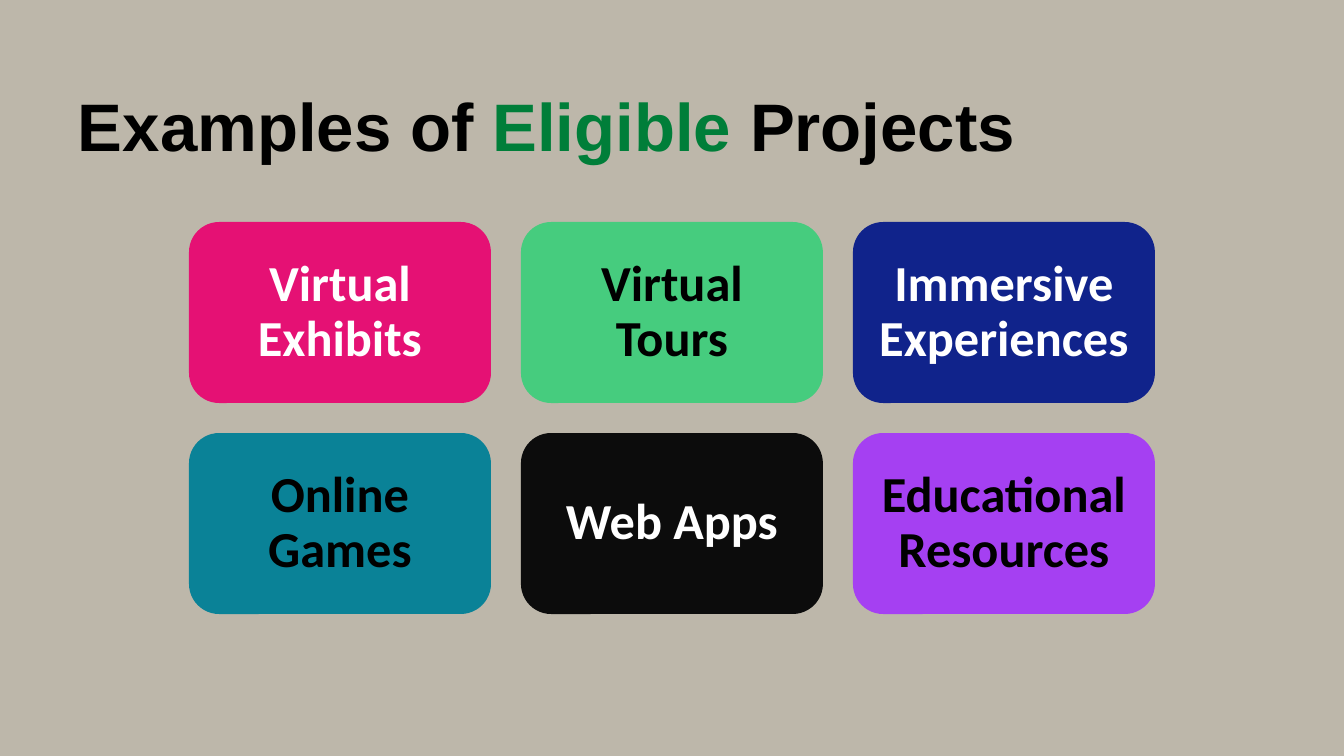
from dataclasses import dataclass

from pptx import Presentation, util as u
from pptx.dml.color import RGBColor
from pptx.enum import shapes, text

PX = 914400 / 100.8
COLORS = {
    "background": "BDB7AA",
    "black": "000000",
    "white": "FFFFFF",
    "eligible": "007E39",
    "pink": "E51174",
    "green": "46CC7E",
    "navy": "10238B",
    "teal": "0A8297",
    "charcoal": "0C0C0C",
    "purple": "A540F2",
}
COLUMNS = 3
GRID_LEFT, GRID_TOP = 189, 222
CARD_WIDTH, CARD_HEIGHT, GAP = 302, 181, 30


@dataclass(frozen=True)
class Project:
    label: str
    fill: str
    ink: str


PROJECTS = [
    Project("Virtual Exhibits", "pink", "white"),
    Project("Virtual Tours", "green", "black"),
    Project("Immersive Experiences", "navy", "white"),
    Project("Online Games", "teal", "black"),
    Project("Web Apps", "charcoal", "white"),
    Project("Educational Resources", "purple", "black"),
]
HEADING = [("Examples of ", "black"), ("Eligible", "eligible"), (" Projects", "black")]


def px(length: int) -> int:
    return round(length * PX)


def color(name: str) -> RGBColor:
    return RGBColor.from_string(COLORS[name])


def apply(target, values: dict) -> None:
    for name, value in values.items():
        setattr(target, name, value)


def add_run(paragraph, words: str, ink: str, font: dict) -> None:
    run = paragraph.add_run()
    run.text = words
    apply(run.font, font)
    run.font.color.rgb = color(ink)


def format_heading(heading) -> None:
    apply(heading, {"left": px(78), "top": px(81), "width": px(1078), "height": px(117)})
    apply(heading.text_frame, {
        "margin_left": 0, "margin_top": 0, "margin_right": 0, "margin_bottom": px(28),
        "vertical_anchor": text.MSO_ANCHOR.TOP, "word_wrap": True,
        "auto_size": text.MSO_AUTO_SIZE.NONE,
    })
    line = heading.text_frame.paragraphs[0]
    apply(line, {"alignment": text.PP_ALIGN.LEFT, "line_spacing": u.Pt(60),
                 "space_before": u.Pt(0)})
    for words, ink in HEADING:
        add_run(line, words, ink, {"name": "Arial", "size": u.Pt(48), "bold": True})


def draw_project(slide, project: Project, index: int) -> None:
    row, column = divmod(index, COLUMNS)
    card = slide.shapes.add_shape(
        shapes.MSO_SHAPE.ROUNDED_RECTANGLE,
        px(GRID_LEFT + column * (CARD_WIDTH + GAP)),
        px(GRID_TOP + row * (CARD_HEIGHT + GAP)),
        px(CARD_WIDTH), px(CARD_HEIGHT))
    card.shadow.inherit = False
    card.fill.solid()
    card.fill.fore_color.rgb = color(project.fill)
    card.line.fill.background()
    inset = px(15)
    apply(card.text_frame, {
        "margin_left": inset, "margin_top": inset,
        "margin_right": inset, "margin_bottom": inset,
        "vertical_anchor": text.MSO_ANCHOR.MIDDLE, "word_wrap": True,
    })
    label = card.text_frame.paragraphs[0]
    apply(label, {"alignment": text.PP_ALIGN.CENTER, "line_spacing": 0.9})
    add_run(label, project.label, project.ink,
            {"name": "Calibri", "size": u.Pt(36), "bold": True})


def main() -> None:
    deck = Presentation()
    apply(deck, {"slide_width": px(1344), "slide_height": px(756)})
    slide = deck.slides.add_slide(deck.slide_layouts[5])
    slide.background.fill.solid()
    slide.background.fill.fore_color.rgb = color("background")
    format_heading(slide.shapes.title)
    for index, project in enumerate(PROJECTS):
        draw_project(slide, project, index)
    deck.save("out.pptx")


if __name__ == "__main__":
    main()
